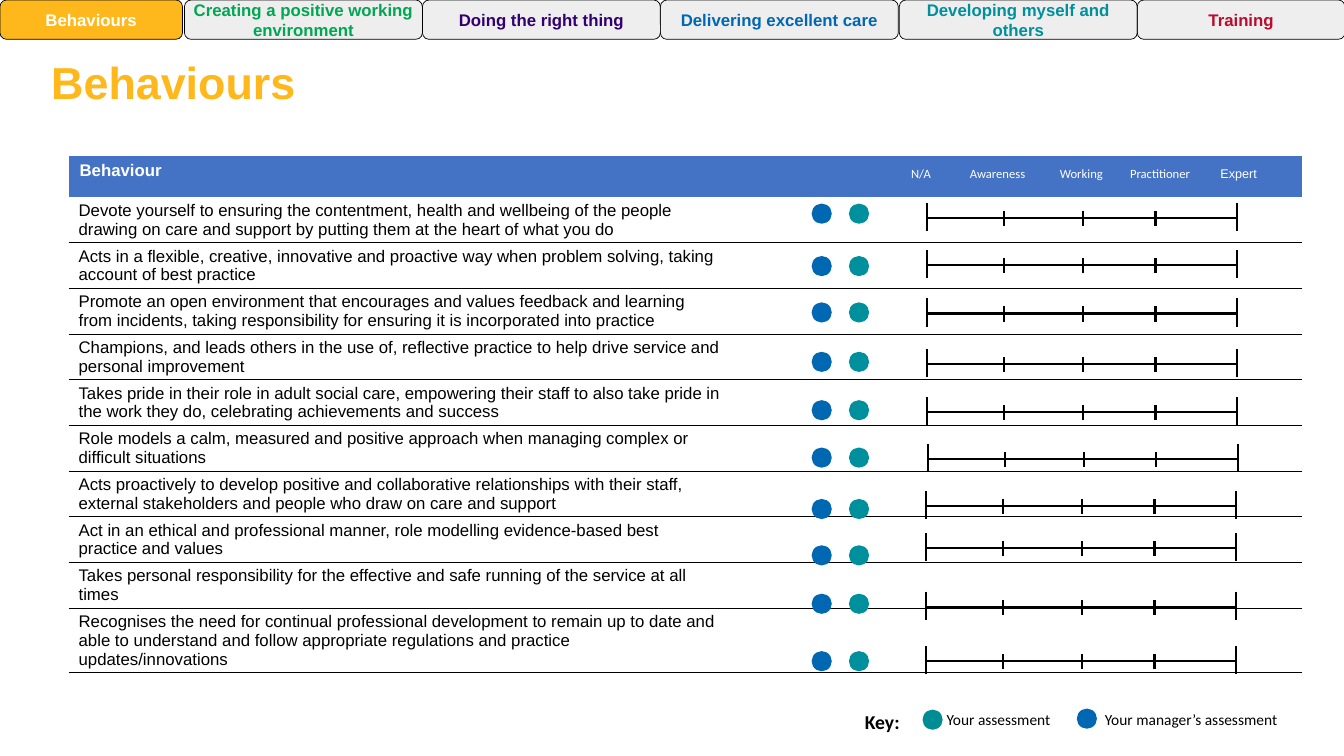
from lxml.etree import SubElement
from pptx import Presentation
from pptx.dml.color import RGBColor
from pptx.enum.shapes import MSO_CONNECTOR as Connector, MSO_SHAPE as Shape
from pptx.enum.text import MSO_ANCHOR as Anchor, PP_ALIGN as Align
from pptx.oxml.ns import qn
from pptx.util import Pt

PX = 9144  # 100 px to the inch
NO_GRID_STYLE = "{2D5ABB26-0587-4C30-8999-92F81FD0307C}"

BLACK = RGBColor(0x00, 0x00, 0x00)
WHITE = RGBColor(0xFF, 0xFF, 0xFF)
AMBER = RGBColor(0xFF, 0xB8, 0x1C)
GREY = RGBColor(0xCA, 0xCA, 0xCA)
GREEN = RGBColor(0x00, 0xA6, 0x51)
PURPLE = RGBColor(0x33, 0x00, 0x72)
BLUE = RGBColor(0x00, 0x68, 0xB3)
TEAL = RGBColor(0x00, 0x8F, 0x9C)
KEY_TEAL = RGBColor(0x00, 0x8C, 0x95)
RED = RGBColor(0xBA, 0x0C, 0x2F)
HEADER_BLUE = RGBColor(0x44, 0x72, 0xC4)

# label, left, width, text colour
TABS = [
    ("Behaviours", 0, 181, WHITE),
    ("Creating a positive working environment", 183, 236, GREEN),
    ("Doing the right thing", 419, 236, PURPLE),
    ("Delivering excellent care", 655, 236, BLUE),
    ("Developing myself and others", 892, 236, TEAL),
    ("Training", 1128, 206, RED),
]

# wording, top of the dots, left and middle of the rating scale
BEHAVIOURS = [
    ("Devote yourself to ensuring the contentment, health and wellbeing of the people "
     "drawing on care and support by putting them at the heart of what you do", 202, 919, 216),
    ("Acts in a flexible, creative, innovative and proactive way when problem solving, "
     "taking account of best practice", 254, 919, 263),
    ("Promote an open environment that encourages and values feedback and learning from "
     "incidents, taking responsibility for ensuring it is incorporated into practice", 300, 919, 311),
    ("Champions, and leads others in the use of, reflective practice to help drive service "
     "and personal improvement", 349, 919, 361),
    ("Takes pride in their role in adult social care, empowering their staff to also take "
     "pride in the work they do, celebrating achievements and success", 397, 919, 409),
    ("Role models a calm, measured and positive approach when managing complex or "
     "difficult situations", 444, 920, 455),
    ("Acts proactively to develop positive and collaborative relationships with their "
     "staff, external stakeholders and people who draw on care and support", 495, 918, 502),
    ("Act in an ethical and professional manner, role modelling evidence-based best "
     "practice and values", 541, 918, 544),
    ("Takes personal responsibility for the effective and safe running of the service at "
     "all times", 589, 918, 602),
    ("Recognises the need for continual professional development to remain up to date and "
     "able to understand and follow appropriate regulations and practice "
     "updates/innovations", 646, 918, 656),
]

# label, left, width, font, alignment
LEVELS = [
    ("N/A", 875, 77, "Calibri", Align.CENTER),
    ("Awareness", 952, 87, "Calibri", Align.LEFT),
    ("Working", 1029, 87, "Calibri", Align.CENTER),
    ("Practitioner", 1107, 87, "Calibri", Align.CENTER),
    ("Expert", 1185, 87, "Arial", Align.CENTER),
]


def px(*lengths):
    return [length * PX for length in lengths]


def write(frame, text, size, color, font="Arial", bold=False, align=Align.LEFT):
    paragraph = frame.paragraphs[0]
    paragraph.alignment = align
    run = paragraph.add_run()
    run.text = text
    run.font.name = font
    run.font.size = Pt(size)
    run.font.bold = bold
    run.font.color.rgb = color


def set_margins(target, side, vertical):
    target.margin_left, target.margin_right = px(side, side)
    target.margin_top, target.margin_bottom = px(vertical, vertical)


def add_label(slide, box, text, size, color, font="Calibri", bold=False, align=Align.LEFT):
    frame = slide.shapes.add_textbox(*px(*box)).text_frame
    frame.word_wrap = True
    write(frame, text, size, color, font, bold, align)


def add_dot(slide, left, top, color):
    dot = slide.shapes.add_shape(Shape.OVAL, *px(left, top, 20, 20))
    dot.shadow.inherit = False
    dot.fill.solid()
    dot.fill.fore_color.rgb = color
    dot.line.fill.background()


def add_tabs(slide, left, top, height):
    for index, (text, offset, width, color) in enumerate(TABS):
        tab = slide.shapes.add_shape(
            Shape.ROUNDED_RECTANGLE, *px(left + offset, top, width, height))
        tab.shadow.inherit = False
        tab.fill.solid()
        tab.fill.fore_color.rgb = AMBER if index == 0 else GREY
        if index > 0:
            fill_color = tab.fill._xPr.find(qn("a:solidFill"))[0]
            SubElement(fill_color, qn("a:alpha"), val="30000")
        tab.line.color.rgb = BLACK
        tab.line.width = Pt(0.5)
        frame = tab.text_frame
        frame.word_wrap = True
        frame.vertical_anchor = Anchor.MIDDLE
        set_margins(frame, 0, 5)
        write(frame, text, 12, color, bold=True, align=Align.CENTER)


def add_title(slide, box):
    frame = slide.shapes.add_textbox(*px(*box)).text_frame
    frame.word_wrap = False
    set_margins(frame, 10, 10)
    write(frame, "Behaviours", 32, AMBER, bold=True)


def add_bottom_border(cell):
    line = SubElement(cell._tc.get_or_add_tcPr(), qn("a:lnB"), w=str(Pt(1)))
    SubElement(SubElement(line, qn("a:solidFill")), qn("a:srgbClr"), val=str(BLACK))


def add_behaviour_table(slide, left, top):
    columns = [658, 565]
    heights = [38] + [45] * (len(BEHAVIOURS) - 1) + [64]
    table = slide.shapes.add_table(
        len(heights), len(columns), *px(left, top, sum(columns), sum(heights))).table
    table._tbl.tblPr.find(qn("a:tableStyleId")).text = NO_GRID_STYLE
    for column, width in zip(table.columns, columns):
        column.width = width * PX
    for row, height in zip(table.rows, heights):
        row.height = height * PX

    for cell in table.rows[0].cells:
        cell.fill.solid()
        cell.fill.fore_color.rgb = HEADER_BLUE
    header = table.cell(0, 0)
    set_margins(header, 11, 5)
    write(header.text_frame, "Behaviour", 12, WHITE, bold=True)

    for index, (text, *_) in enumerate(BEHAVIOURS, start=1):
        for cell in table.rows[index].cells:
            set_margins(cell, 10, 4)
            cell.vertical_anchor = Anchor.BOTTOM
            add_bottom_border(cell)
            cell.fill.background()
        write(table.cell(index, 0).text_frame, text, 12, BLACK)


def add_rating_scale(slide, left, middle):
    """Draw a horizontal axis with tall end marks and three short marks."""
    group = slide.shapes.add_group_shape()
    right = left + 308
    lines = [(left, middle, right, middle)]
    lines += [(end, middle - 15, end, middle + 13) for end in (left, right)]
    lines += [(left + step, middle + 8, left + step, middle - 7) for step in (77, 155, 227)]
    for ends in lines:
        line = group.shapes.add_connector(Connector.STRAIGHT, *px(*ends))
        line.line.color.rgb = BLACK
        line.line.width = Pt(1.5)
        SubElement(line._element.spPr, qn("a:effectLst"))


def add_ratings(slide, header_top):
    for text, left, width, font, align in LEVELS:
        add_label(slide, (left, header_top, width, 25), text, 9, WHITE, font, align=align)
    for _, dot_top, scale_left, scale_middle in BEHAVIOURS:
        add_rating_scale(slide, scale_left, scale_middle)
        add_dot(slide, 805, dot_top, BLUE)
        add_dot(slide, 842, dot_top, TEAL)


def add_key(slide, left, top):
    add_label(slide, (left, top, 67, 34), "Key:", 14, BLACK, bold=True)
    add_dot(slide, left + 67, top + 5, KEY_TEAL)
    add_label(slide, (left + 81, top + 1, 140, 29), "Your assessment", 11, BLACK)
    add_dot(slide, left + 220, top + 4, BLUE)
    add_label(slide, (left + 238, top + 1, 231, 29), "Your manager’s assessment", 11, BLACK)


def main():
    presentation = Presentation()
    presentation.slide_width, presentation.slide_height = px(1333, 750)
    slide = presentation.slides.add_slide(presentation.slide_layouts[6])
    add_behaviour_table(slide, 68, 155)
    add_key(slide, 848, 699)
    add_tabs(slide, 0, 0, 39)
    add_title(slide, (41, 44, 289, 69))
    add_ratings(slide, 160)
    presentation.save("out.pptx")


if __name__ == "__main__":
    main()
